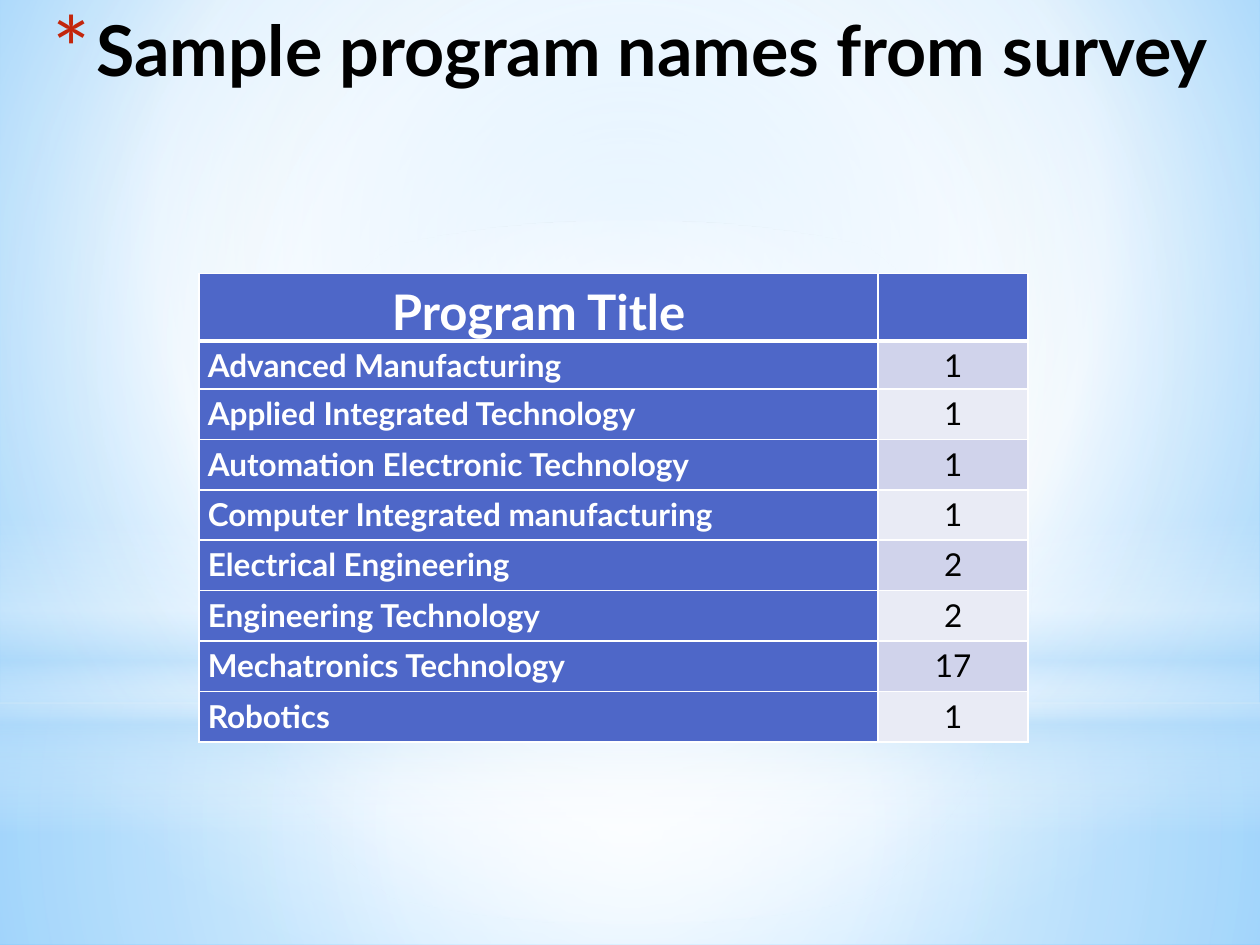
from dataclasses import dataclass
from typing import NamedTuple, Optional

from lxml import etree
from pptx import Presentation
from pptx.dml.color import RGBColor
from pptx.enum.shapes import MSO_SHAPE
from pptx.enum.text import MSO_ANCHOR, MSO_AUTO_SIZE, PP_ALIGN
from pptx.oxml.ns import qn
from pptx.util import Inches, Pt

RECTANGLE = MSO_SHAPE.RECTANGLE
OVAL = MSO_SHAPE.OVAL
TOP = MSO_ANCHOR.TOP
LEFT = PP_ALIGN.LEFT
CENTER = PP_ALIGN.CENTER
NO_AUTOFIT = MSO_AUTO_SIZE.NONE
TITLE_ONLY = 5


@dataclass(frozen=True)
class Theme:
    font: str = "Lato"
    black: str = "000000"
    white: str = "FFFFFF"
    header: str = "4E67C8"
    odd_row: str = "D0D3EB"
    even_row: str = "E9EBF5"
    bullet: str = "C3260C"
    sky: str = "B4DCFA"
    sky_inner: str = "9ED5FF"
    sky_outer: str = "5BB9FF"
    title_size: int = 40
    header_size: int = 28
    body_size: int = 18


class Stop(NamedTuple):
    position: int
    color: str
    opacity: int = 100


class Gradient(NamedTuple):
    stops: tuple[Stop, ...]
    focus: tuple[int, int, int, int] = (50, 50, 50, 50)
    angle: Optional[int] = None


class Glow(NamedTuple):
    kind: MSO_SHAPE
    top: float
    height: float
    gradient: Gradient


class Program(NamedTuple):
    title: str
    count: int


THEME = Theme()
WHITE, SKY = THEME.white, THEME.sky

BACKDROP = Gradient(
    (Stop(0, THEME.sky_inner), Stop(60, WHITE), Stop(100, THEME.sky_outer)),
    (20, 10, 20, 60),
)
GLOWS = (
    Glow(RECTANGLE, 5.58, 1.92, Gradient((Stop(0, WHITE, 91), Stop(37, WHITE, 76), Stop(100, SKY, 79)))),
    Glow(RECTANGLE, 0, 5.58, Gradient((Stop(0, WHITE, 89), Stop(48, WHITE, 62), Stop(100, SKY, 79)))),
    Glow(RECTANGLE, 4.12, 2.5, Gradient(
        (Stop(0, WHITE, 0), Stop(29, WHITE, 30), Stop(45, SKY, 40),
         Stop(55, WHITE, 26), Stop(65, SKY, 60), Stop(100, WHITE, 0)),
        angle=90,
    )),
    Glow(OVAL, 1.75, 5.58, Gradient((Stop(0, WHITE), Stop(56, WHITE, 0)))),
)
PROGRAMS = (
    Program("Advanced Manufacturing", 1),
    Program("Applied Integrated Technology", 1),
    Program("Automation Electronic Technology", 1),
    Program("Computer Integrated manufacturing", 1),
    Program("Electrical Engineering", 2),
    Program("Engineering Technology", 2),
    Program("Mechatronics Technology", 17),
    Program("Robotics", 1),
)
COLUMN_WIDTHS = (5.39, 1.19)
ROW_HEIGHTS = (0.46, 0.38) + (0.4,) * (len(PROGRAMS) - 1)


def add_child(parent, tag: str, **attributes):
    return etree.SubElement(parent, qn(tag), {key: str(value) for key, value in attributes.items()})


def apply_gradient(fill, owner, gradient: Gradient) -> None:
    fill.solid()
    solid = owner.find(".//" + qn("a:solidFill"))
    node = etree.Element(qn("a:gradFill"), rotWithShape="1")
    stop_list = add_child(node, "a:gsLst")
    for stop in gradient.stops:
        entry = add_child(stop_list, "a:gs", pos=stop.position * 1000)
        color = add_child(entry, "a:srgbClr", val=stop.color)
        if stop.opacity < 100:
            add_child(color, "a:alpha", val=stop.opacity * 1000)
    if gradient.angle is None:
        shade = add_child(node, "a:path", path="circle")
        sides = {side: share * 1000 for side, share in zip("ltrb", gradient.focus)}
        add_child(shade, "a:fillToRect", **sides)
    else:
        add_child(node, "a:lin", ang=gradient.angle * 60000, scaled=0)
    solid.getparent().replace(solid, node)


def add_glow(page, glow: Glow) -> None:
    shape = page.shapes.add_shape(glow.kind, 0, Inches(glow.top), Inches(10), Inches(glow.height))
    shape.shadow.inherit = False
    shape.line.fill.background()
    apply_gradient(shape.fill, shape.element, glow.gradient)


def add_span(para, text: str, size: int, color: str, bold: bool) -> None:
    span = para.add_run()
    span.text = text
    span.font.name = THEME.font
    span.font.size = Pt(size)
    span.font.bold = bold
    span.font.color.rgb = RGBColor.from_string(color)


def place_title(page, text: str) -> None:
    title = page.shapes.title
    title.element.getparent().append(title.element)
    title.left, title.top, title.width, title.height = 0, 0, Inches(10), Inches(1.25)
    frame = title.text_frame
    frame.word_wrap = True
    frame.auto_size = NO_AUTOFIT
    frame.vertical_anchor = TOP
    para = frame.paragraphs[0]
    para.alignment = CENTER
    indent = Inches(0.35)
    properties = para._p.get_or_add_pPr()
    properties.set("marL", str(indent))
    properties.set("indent", str(-indent))
    add_child(add_child(properties, "a:buClr"), "a:srgbClr", val=THEME.bullet)
    add_child(properties, "a:buSzPct", val=128000)
    add_child(properties, "a:buFont", typeface=THEME.font)
    add_child(properties, "a:buChar", char="*")
    add_span(para, text, THEME.title_size, THEME.black, True)


def style_cell(cell, fill: str, bottom: int = 1, top: int = 1) -> None:
    properties = cell._tc.get_or_add_tcPr()
    for side, width in (("L", 1), ("R", 1), ("T", top), ("B", bottom)):
        line = add_child(properties, f"a:ln{side}", w=Pt(width))
        add_child(add_child(line, "a:solidFill"), "a:srgbClr", val=WHITE)
    cell.fill.solid()
    cell.fill.fore_color.rgb = RGBColor.from_string(fill)
    cell.margin_left = cell.margin_right = Inches(0.07)
    cell.margin_top = cell.margin_bottom = 0
    cell.vertical_anchor = TOP


def write_cell(cell, text: str, size: int, color: str, bold: bool, alignment: PP_ALIGN) -> None:
    para = cell.text_frame.paragraphs[0]
    para.alignment = alignment
    para.line_spacing = 1.15
    add_span(para, text, size, color, bold)


def add_program_table(page) -> None:
    table = page.shapes.add_table(
        len(ROW_HEIGHTS), len(COLUMN_WIDTHS), Inches(1.58), Inches(2.17),
        Inches(sum(COLUMN_WIDTHS)), Inches(sum(ROW_HEIGHTS)),
    ).table
    for column, width in zip(table.columns, COLUMN_WIDTHS):
        column.width = Inches(width)
    for row, height in zip(table.rows, ROW_HEIGHTS):
        row.height = Inches(height)
    for cell in table.rows[0].cells:
        style_cell(cell, THEME.header, bottom=3)
    write_cell(table.cell(0, 0), "Program Title", THEME.header_size, WHITE, True, CENTER)
    for number, program in enumerate(PROGRAMS, start=1):
        name, count = table.rows[number].cells
        top = 3 if number == 1 else 1
        style_cell(name, THEME.header, top=top)
        style_cell(count, THEME.odd_row if number % 2 else THEME.even_row, top=top)
        write_cell(name, program.title, THEME.body_size, WHITE, True, LEFT)
        write_cell(count, str(program.count), THEME.body_size, THEME.black, False, CENTER)


def main() -> None:
    deck = Presentation()
    deck.slide_width, deck.slide_height = Inches(10), Inches(7.5)
    page = deck.slides.add_slide(deck.slide_layouts[TITLE_ONLY])
    apply_gradient(page.background.fill, page.element, BACKDROP)
    for glow in GLOWS:
        add_glow(page, glow)
    place_title(page, "Sample program names from survey")
    add_program_table(page)
    deck.save("out.pptx")


if __name__ == "__main__":
    main()
